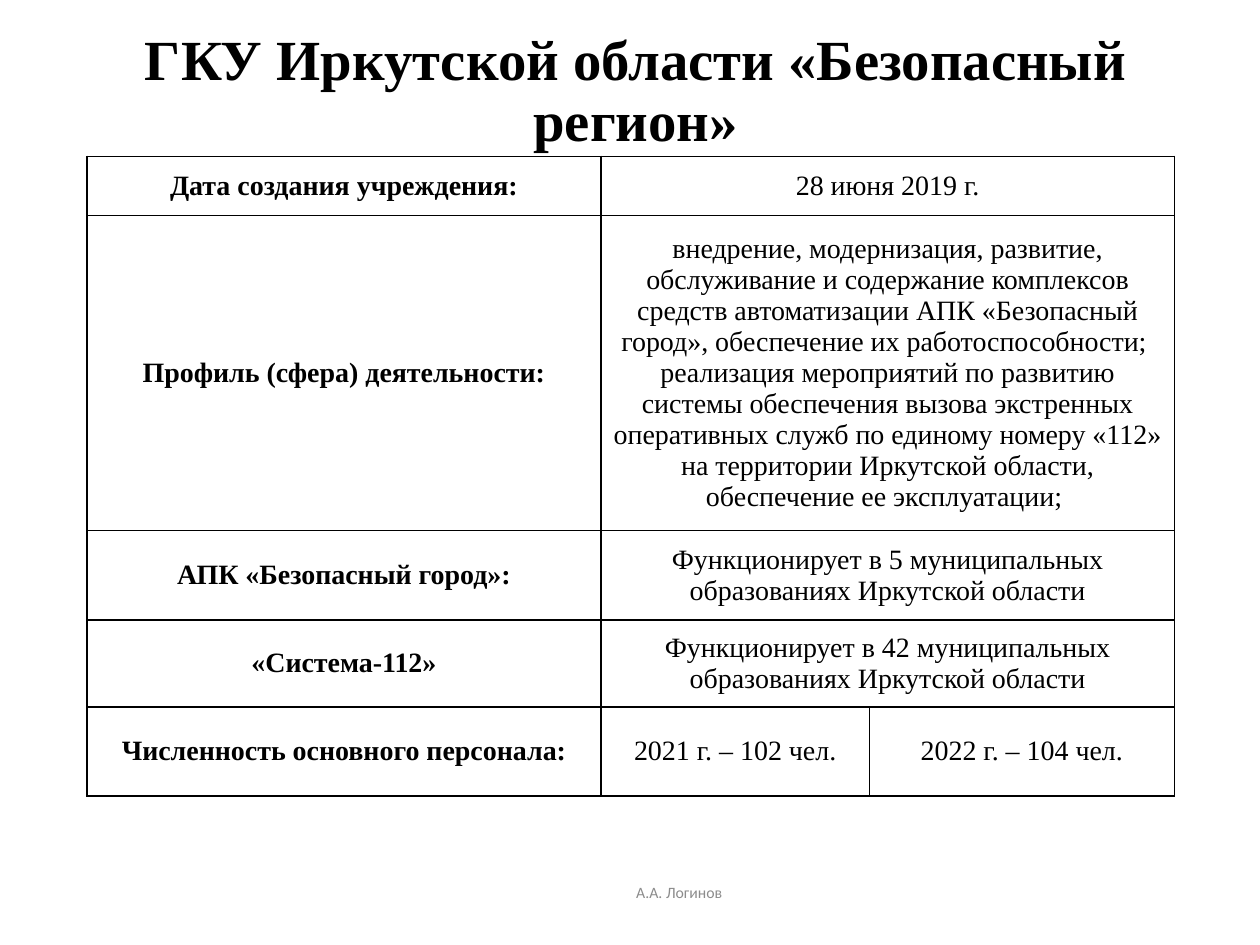
import dataclasses

import pptx
import pptx.dml.color
import pptx.enum.text
import pptx.oxml
import pptx.oxml.ns
import pptx.util

Inches = pptx.util.Inches


@dataclasses.dataclass(frozen=True)
class Theme:
    """Fonts, type sizes and colours of the slide."""
    serif: str = "Times New Roman"
    sans: str = "Calibri"
    title_size: float = 32.4
    table_size: float = 16
    footer_size: float = 9
    ink: str = "000000"
    muted: str = "8C8C8C"
    border_width: float = 1


THEME = Theme()
COLUMN_WIDTHS = (4.08, 2.13, 2.42)
ROW_HEIGHTS = (0.47, 2.5, 0.71, 0.69, 0.71)
ROWS = (
    ("Дата создания учреждения:", "28 июня 2019 г."),
    ("Профиль (сфера) деятельности:",
     "внедрение, модернизация, развитие, обслуживание и содержание комплексов "
     "средств автоматизации АПК «Безопасный город», обеспечение их работоспособности; \n"
     "реализация мероприятий по развитию системы обеспечения вызова экстренных "
     "оперативных служб по единому номеру «112» на территории Иркутской области, "
     "обеспечение ее эксплуатации; "),
    ("АПК «Безопасный город»:",
     "Функционирует в 5 муниципальных образованиях Иркутской области"),
    ("«Система-112»",
     "Функционирует в 42 муниципальных образованиях Иркутской области"),
    ("Численность основного персонала:", "2021 г. – 102 чел.", "2022 г. – 104 чел."),
)


def write_text(frame, text, font, size, color, bold=False, spacing=None):
    """Fill a text frame with centred text in one style."""
    frame.text = text
    frame.word_wrap = True
    for para in frame.paragraphs:
        para.alignment = pptx.enum.text.PP_ALIGN.CENTER
        para.line_spacing = spacing
        for span in para.runs:
            span.font.name = font
            span.font.size = pptx.util.Pt(size)
            span.font.bold = bold
            span.font.color.rgb = pptx.dml.color.RGBColor.from_string(color)


def place(shape, left, top, width, height):
    """Move and size a shape, in inches."""
    shape.left, shape.top = Inches(left), Inches(top)
    shape.width, shape.height = Inches(width), Inches(height)


def add_title(page, text):
    """Write the title placeholder."""
    title = page.shapes.title
    place(title, 0.2, 0.4, 9.69, 0.67)
    write_text(title.text_frame, text, THEME.serif, THEME.title_size,
               THEME.ink, bold=True, spacing=0.9)
    title.text_frame.auto_size = pptx.enum.text.MSO_AUTO_SIZE.NONE
    title.text_frame.vertical_anchor = pptx.enum.text.MSO_ANCHOR.MIDDLE


def draw_borders(cell):
    """Draw a thin line on all four sides of a cell."""
    properties = cell._tc.get_or_add_tcPr()
    for index, side in enumerate(("lnL", "lnR", "lnT", "lnB")):
        line = pptx.oxml.parse_xml(
            f'<a:{side} {pptx.oxml.ns.nsdecls("a")} w="{pptx.util.Pt(THEME.border_width)}">'
            f'<a:solidFill><a:srgbClr val="{THEME.ink}"/></a:solidFill></a:{side}>')
        properties.insert(index, line)


def add_facts_table(page):
    """Add the table of facts, merging the value cells of two-part rows."""
    frame = page.shapes.add_table(
        len(ROWS), len(COLUMN_WIDTHS), Inches(0.69), Inches(1.24),
        Inches(sum(COLUMN_WIDTHS)), Inches(sum(ROW_HEIGHTS)))
    table = frame.table
    table.first_row = table.horz_banding = False
    for column, width in zip(table.columns, COLUMN_WIDTHS):
        column.width = Inches(width)
    for row_index, (row, height, texts) in enumerate(zip(table.rows, ROW_HEIGHTS, ROWS)):
        row.height = Inches(height)
        if len(texts) == 2:
            table.cell(row_index, 1).merge(table.cell(row_index, 2))
        for cell in row.cells:
            cell.fill.background()
            draw_borders(cell)
        for index, text in enumerate(texts):
            cell = table.cell(row_index, index)
            cell.vertical_anchor = pptx.enum.text.MSO_ANCHOR.MIDDLE
            write_text(cell.text_frame, text, THEME.serif, THEME.table_size,
                       THEME.ink, bold=index == 0)


def add_footer(page, text):
    """Add the author's name at the foot of the slide."""
    box = page.shapes.add_textbox(Inches(2.4), Inches(6.82), Inches(5.98), Inches(0.53))
    write_text(box.text_frame, text, THEME.sans, THEME.footer_size, THEME.muted)
    box.text_frame.vertical_anchor = pptx.enum.text.MSO_ANCHOR.MIDDLE


def main():
    """Build and save the deck."""
    deck = pptx.Presentation()
    deck.slide_width, deck.slide_height = Inches(10), Inches(7.5)
    page = deck.slides.add_slide(deck.slide_layouts[5])
    add_title(page, "ГКУ Иркутской области «Безопасный регион»")
    add_facts_table(page)
    add_footer(page, "А.А. Логинов")
    deck.save("out.pptx")


if __name__ == "__main__":
    main()
